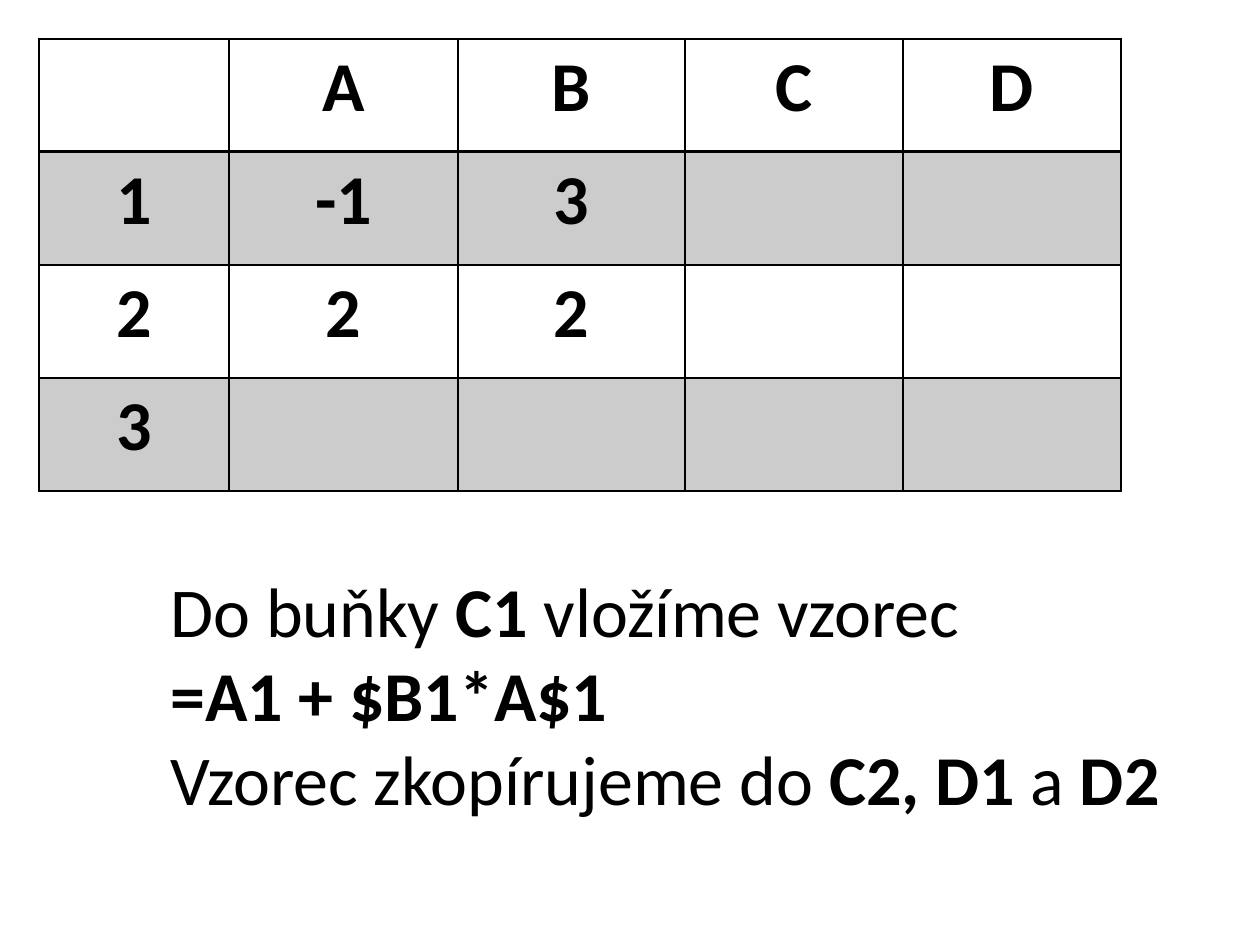
from dataclasses import dataclass

from lxml import etree
from pptx import Presentation
from pptx import util as u
from pptx.dml.color import RGBColor
from pptx.enum import text
from pptx.oxml import ns

GRID = [
    ["", "A", "B", "C", "D"],
    ["1", "-1", "3", "", ""],
    ["2", "2", "2", "", ""],
    ["3", "", "", "", ""],
]
INSTRUCTIONS = [
    [("Do buňky ", False), ("C1", True), (" vložíme vzorec", False)],
    [("=A1 + $B1*A$1", True)],
    [("Vzorec zkopírujeme do ", False), ("C2, D1 ", True), ("a", False), (" D2", True)],
]

SLIDE_SIZE = (1260, 945)
TABLE_ORIGIN = (39, 39)
COLUMN_WIDTHS = [190, 229, 227, 218, 218]
ROW_HEIGHT = 113
INSTRUCTIONS_BOX = (158, 561, 1033, 267)


@dataclass(frozen=True)
class Theme:
    font: str = "Calibri"
    size: int = 40
    ink: str = "000000"
    band_alpha: int = 20
    line: int = 1
    header_line: int = 2


THEME = Theme()


def px(value):
    return u.Emu(round(value * 914400 / 126))


def add_run(paragraph, content, bold):
    run = paragraph.add_run()
    run.text = content
    run.font.name = THEME.font
    run.font.size = u.Pt(THEME.size)
    run.font.bold = bold
    run.font.color.rgb = RGBColor.from_string(THEME.ink)


def add_border(properties, side, width):
    line = etree.SubElement(properties, ns.qn(f"a:ln{side}"), w=str(u.Pt(width)))
    fill = etree.SubElement(line, ns.qn("a:solidFill"))
    etree.SubElement(fill, ns.qn("a:srgbClr"), val=THEME.ink)


def style_cell(cell, row):
    properties = cell._tc.get_or_add_tcPr()
    heavy_side = {0: "B", 1: "T"}.get(row)
    for side in "LRTB":
        add_border(properties, side, THEME.header_line if side == heavy_side else THEME.line)
    if row % 2 == 0:
        cell.fill.background()
        return
    cell.fill.solid()
    cell.fill.fore_color.rgb = RGBColor.from_string(THEME.ink)
    color = properties.find(ns.qn("a:solidFill")).find(ns.qn("a:srgbClr"))
    etree.SubElement(color, ns.qn("a:alpha"), val=str(THEME.band_alpha * 1000))


def add_grid(slide):
    size = (sum(COLUMN_WIDTHS), ROW_HEIGHT * len(GRID))
    frame = slide.shapes.add_table(
        len(GRID), len(COLUMN_WIDTHS), *map(px, TABLE_ORIGIN + size)
    )
    table = frame.table
    for column, width in zip(table.columns, COLUMN_WIDTHS):
        column.width = px(width)
    for row_index, values in enumerate(GRID):
        table.rows[row_index].height = px(ROW_HEIGHT)
        for column_index, value in enumerate(values):
            cell = table.cell(row_index, column_index)
            style_cell(cell, row_index)
            if value:
                paragraph = cell.text_frame.paragraphs[0]
                paragraph.alignment = text.PP_ALIGN.CENTER
                add_run(paragraph, value, True)


def add_instructions(slide):
    frame = slide.shapes.add_textbox(*map(px, INSTRUCTIONS_BOX)).text_frame
    frame.word_wrap = True
    frame.auto_size = text.MSO_AUTO_SIZE.SHAPE_TO_FIT_TEXT
    for index, runs in enumerate(INSTRUCTIONS):
        paragraph = frame.add_paragraph() if index else frame.paragraphs[0]
        for content, bold in runs:
            add_run(paragraph, content, bold)


def main():
    presentation = Presentation()
    presentation.slide_width, presentation.slide_height = map(px, SLIDE_SIZE)
    slide = presentation.slides.add_slide(presentation.slide_layouts[6])
    add_grid(slide)
    add_instructions(slide)
    presentation.save("out.pptx")


if __name__ == "__main__":
    main()
